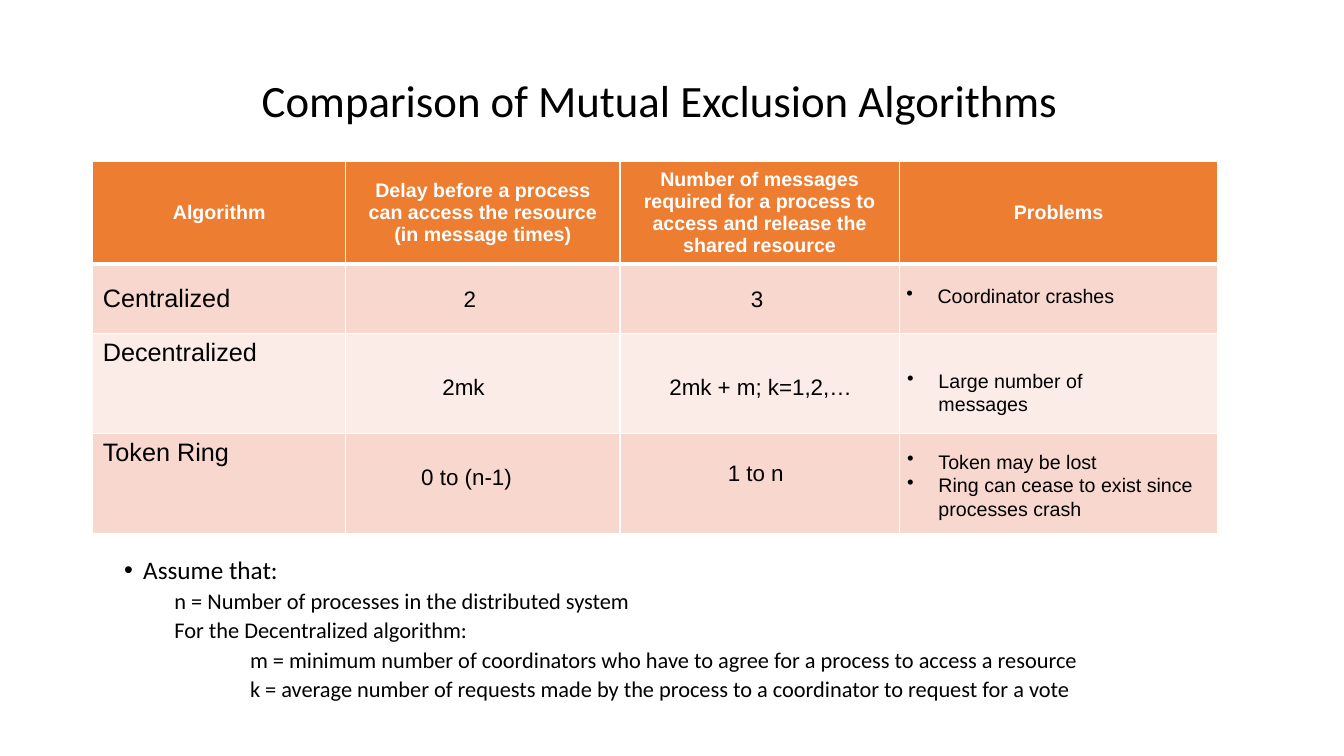
from lxml import etree
from pptx import Presentation
from pptx.dml.color import RGBColor
from pptx.enum.text import MSO_ANCHOR, MSO_AUTO_SIZE, PP_ALIGN
from pptx.oxml.ns import qn
from pptx.util import Pt

PX = 9144
BLACK = RGBColor(0x00, 0x00, 0x00)
WHITE = RGBColor(0xFF, 0xFF, 0xFF)
ORANGE = RGBColor(0xED, 0x7D, 0x31)
ROSE = RGBColor(0xF8, 0xD7, 0xCE)
PALE_ROSE = RGBColor(0xFC, 0xEC, 0xE8)
CENTER, LEFT = PP_ALIGN.CENTER, PP_ALIGN.LEFT
MIDDLE, TOP = MSO_ANCHOR.MIDDLE, MSO_ANCHOR.TOP
NO_FIT, GROW = MSO_AUTO_SIZE.NONE, MSO_AUTO_SIZE.SHAPE_TO_FIT_TEXT

TITLE_BOX = (192, 30, 925, 145)
TABLE_BOX = (92, 160, 1116, 369)
BODY_BOX = (113, 548, 1062, 161)

COLUMN_WIDTHS = (251, 272, 277, 316)
ROW_HEIGHTS = (102, 69, 99, 99)
HEADINGS = (
    "Algorithm",
    "Delay before a process can access the resource (in message times)",
    "Number of messages required for a process to access and release the shared resource",
    "Problems",
)
ALGORITHMS = (
    ("Centralized", MIDDLE, ROSE),
    ("Decentralized", TOP, PALE_ROSE),
    ("Token Ring", TOP, ROSE),
)
VALUES = (
    ("2", (358, 118, 33, 37)),
    ("3", (643, 118, 42, 37)),
    ("2mk", (337, 205, 70, 37)),
    ("2mk + m; k=1,2,…", (562, 205, 211, 37)),
    ("0 to (n-1)", (316, 295, 117, 37)),
    ("1 to n", (620, 291, 88, 37)),
)
PROBLEMS = (
    (("Coordinator crashes",), (797, 117, 242, 34)),
    (("Large number of messages",), (798, 201, 250, 57)),
    (("Token may be lost", "Ring can cease to exist since processes crash"),
     (798, 281, 314, 81)),
)
ASSUMPTIONS = (
    ("Assume that:", 0, 19, 18),
    ("n = Number of processes in the distributed system", 1, 50, 16),
    ("For the Decentralized algorithm:", 1, 50, 16),
    ("m = minimum number of coordinators who have to agree for a process to access a resource",
     1, 125, 16),
    ("k = average number of requests made by the process to a coordinator to request for a vote",
     1, 125, 16),
)


def emu(box):
    """Turn a box in px into EMU lengths."""
    return [length * PX for length in box]


def place(shape, box):
    """Move a shape to a box."""
    shape.left, shape.top, shape.width, shape.height = emu(box)


def set_font(paragraph, name, size, color=BLACK, bold=False):
    """Set the font of a whole paragraph."""
    font = paragraph.font
    font.name, font.size, font.bold = name, Pt(size), bold
    font.color.rgb = color


def set_indent(paragraph, margin, bullet=None):
    """Indent a paragraph, with a hanging bullet or none."""
    properties = paragraph._p.get_or_add_pPr()
    properties.set("marL", str(margin * PX))
    properties.set("indent", str(-margin * PX if bullet else 0))
    if bullet:
        etree.SubElement(properties, qn("a:buChar")).set("char", bullet)
    else:
        etree.SubElement(properties, qn("a:buNone"))


def set_borders(cell, bottom_width):
    """Draw white borders around a table cell."""
    properties = cell._tc.get_or_add_tcPr()
    widths = {"a:lnL": 1, "a:lnR": 1, "a:lnT": 1, "a:lnB": bottom_width}
    for side, width in widths.items():
        line = etree.SubElement(properties, qn(side), w=str(Pt(width)))
        fill = etree.SubElement(line, qn("a:solidFill"))
        etree.SubElement(fill, qn("a:srgbClr"), val=str(WHITE))


def format_cell(cell, fill, anchor, bottom_width=1):
    """Give a cell its borders, fill and anchor."""
    set_borders(cell, bottom_width)
    cell.fill.solid()
    cell.fill.fore_color.rgb = fill
    cell.vertical_anchor = anchor


def add_title(slide, box):
    """Fill the title placeholder."""
    title = slide.shapes.title
    place(title, box)
    frame = title.text_frame
    frame.text = "Comparison of Mutual Exclusion Algorithms"
    frame.auto_size, frame.vertical_anchor = NO_FIT, MIDDLE
    heading = frame.paragraphs[0]
    heading.alignment, heading.line_spacing = CENTER, 0.9
    set_font(heading, "Calibri", 32)


def add_assumptions(slide, box):
    """Fill the body placeholder with the assumptions."""
    body = slide.placeholders[1]
    place(body, box)
    frame = body.text_frame
    frame.text = "\n".join(text for text, *_ in ASSUMPTIONS)
    frame.auto_size, frame.vertical_anchor = NO_FIT, TOP
    for paragraph, (_, level, margin, size) in zip(frame.paragraphs, ASSUMPTIONS):
        paragraph.level = level
        set_indent(paragraph, margin, None if level else "•")
        paragraph.line_spacing = 0.9
        paragraph.space_before = Pt(3.8 if level else 0)
        set_font(paragraph, "Calibri", size)


def add_entry(slide, origin, box, lines, size, bullet=None):
    """Add a table entry at an offset from the table's corner."""
    left, top, width, height = box
    entry = slide.shapes.add_textbox(
        *emu((origin[0] + left, origin[1] + top, width, height)))
    frame = entry.text_frame
    frame.text = "\n".join(lines)
    frame.word_wrap, frame.auto_size = True, GROW
    for paragraph in frame.paragraphs:
        if bullet:
            set_indent(paragraph, 31, bullet)
        set_font(paragraph, "Arial", size)


def add_comparison(slide, box):
    """Add the comparison table and its entries."""
    table = slide.shapes.add_table(
        len(ROW_HEIGHTS), len(COLUMN_WIDTHS), *emu(box)).table
    for column, width in zip(table.columns, COLUMN_WIDTHS):
        column.width = width * PX
    for row, height in zip(table.rows, ROW_HEIGHTS):
        row.height = height * PX
    for cell, heading in zip(table.rows[0].cells, HEADINGS):
        format_cell(cell, ORANGE, MIDDLE, 3)
        cell.text = heading
        paragraph = cell.text_frame.paragraphs[0]
        paragraph.alignment = CENTER
        set_font(paragraph, "Arial", 14, WHITE, True)
    for index, (algorithm, anchor, fill) in enumerate(ALGORITHMS, 1):
        for cell in table.rows[index].cells:
            format_cell(cell, fill, anchor)
        name_cell = table.cell(index, 0)
        name_cell.text = algorithm
        paragraph = name_cell.text_frame.paragraphs[0]
        paragraph.alignment = LEFT
        set_font(paragraph, "Arial", 18)
    for value, offset in VALUES:
        add_entry(slide, box, offset, (value,), 16)
    for problems, offset in PROBLEMS:
        add_entry(slide, box, offset, problems, 14, "•")


def main():
    """Build and save the slide."""
    presentation = Presentation()
    presentation.slide_width, presentation.slide_height = emu((1333, 750))
    slide = presentation.slides.add_slide(presentation.slide_layouts[1])
    add_title(slide, TITLE_BOX)
    add_assumptions(slide, BODY_BOX)
    add_comparison(slide, TABLE_BOX)
    presentation.save("out.pptx")


if __name__ == "__main__":
    main()
